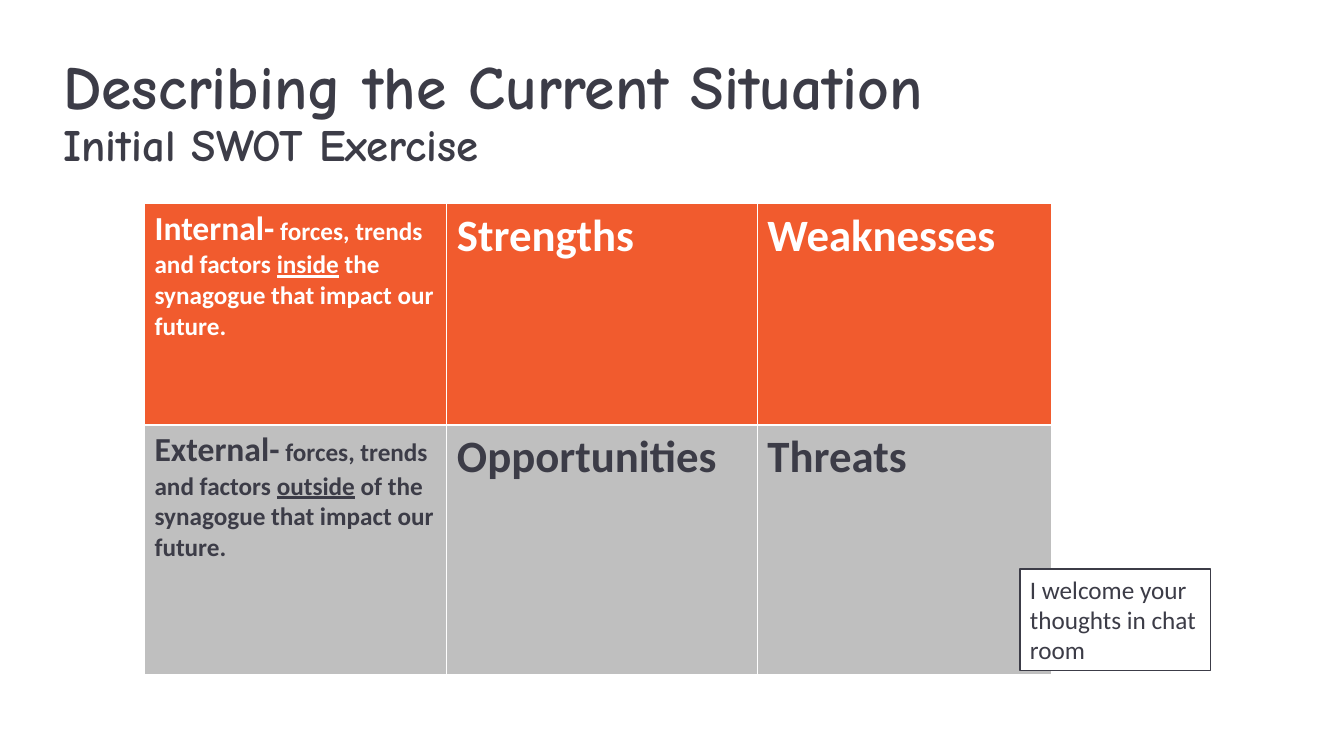
from dataclasses import dataclass

from lxml import etree
from pptx import Presentation
from pptx.dml.color import RGBColor
from pptx.enum.shapes import MSO_SHAPE
from pptx.enum.text import MSO_ANCHOR, MSO_AUTO_SIZE, PP_ALIGN
from pptx.oxml.ns import qn
from pptx.util import Pt

RECTANGLE = MSO_SHAPE.RECTANGLE
MIDDLE = MSO_ANCHOR.MIDDLE
TOP = MSO_ANCHOR.TOP
LEFT = PP_ALIGN.LEFT
FIT_SHAPE = MSO_AUTO_SIZE.SHAPE_TO_FIT_TEXT


@dataclass(frozen=True)
class Theme:
    ink: str = "3C3C47"
    white: str = "FFFFFF"
    orange: str = "F15B2E"
    grey: str = "BFBFBF"
    title_font: str = "Comic Neue"
    body_font: str = "Calibri"
    title_size: float = 44
    heading_size: float = 32
    scope_size: float = 24
    body_size: float = 18
    rule_width: float = 1


@dataclass(frozen=True)
class TextRun:
    text: str
    size: float
    underline: bool = False


@dataclass(frozen=True)
class SwotRow:
    scope: str
    place: str
    ending: str
    headings: tuple[str, str]
    fill: str
    ink: str
    height: float


THEME = Theme()
COLUMN_WIDTHS = (216, 221.8, 210.2)
SWOT_ROWS = (
    SwotRow("Internal-", "inside", " the synagogue that impact our future.",
            ("Strengths", "Weaknesses"), THEME.orange, THEME.white, 158),
    SwotRow("External-", "outside", " of the synagogue that impact our future.",
            ("Opportunities", "Threats"), THEME.grey, THEME.ink, 178.5),
)


def add_run(paragraph, content: TextRun, color: str, font: str, bold: bool) -> None:
    run = paragraph.add_run()
    run.text = content.text
    run.font.size = Pt(content.size)
    run.font.name = font
    run.font.bold = bold
    run.font.underline = content.underline
    run.font.color.rgb = RGBColor.from_string(color)


def add_title(slide) -> None:
    frame = slide.shapes.add_textbox(Pt(38.2), Pt(28.8), Pt(648), Pt(104.4)).text_frame
    frame.word_wrap = True
    frame.vertical_anchor = MIDDLE
    paragraph = frame.paragraphs[0]
    paragraph.line_spacing = 0.9
    add_run(paragraph, TextRun("Describing the Current Situation", THEME.title_size),
            THEME.ink, THEME.title_font, True)
    paragraph.add_line_break()
    add_run(paragraph, TextRun("Initial SWOT Exercise", THEME.heading_size),
            THEME.ink, THEME.title_font, True)


def add_borders(cell) -> None:
    properties = cell._tc.get_or_add_tcPr()
    for side in ("a:lnL", "a:lnR", "a:lnT", "a:lnB"):
        border = etree.SubElement(properties, qn(side), w=str(Pt(THEME.rule_width)))
        fill = etree.SubElement(border, qn("a:solidFill"))
        etree.SubElement(fill, qn("a:srgbClr"), val=THEME.white)


def fill_cell(cell, contents: list[TextRun], row: SwotRow) -> None:
    add_borders(cell)
    cell.fill.solid()
    cell.fill.fore_color.rgb = RGBColor.from_string(row.fill)
    for content in contents:
        add_run(cell.text_frame.paragraphs[0], content, row.ink, THEME.body_font, True)


def add_swot_table(slide) -> None:
    table = slide.shapes.add_table(
        len(SWOT_ROWS), len(COLUMN_WIDTHS), Pt(103.2), Pt(145.6),
        Pt(sum(COLUMN_WIDTHS)), Pt(sum(row.height for row in SWOT_ROWS))).table
    for column, width in zip(table.columns, COLUMN_WIDTHS):
        column.width = Pt(width)
    for index, row in enumerate(SWOT_ROWS):
        table.rows[index].height = Pt(row.height)
        description = [
            TextRun(row.scope, THEME.scope_size),
            TextRun(" forces, trends and factors ", THEME.body_size),
            TextRun(row.place, THEME.body_size, True),
            TextRun(row.ending, THEME.body_size),
        ]
        headings = [[TextRun(heading, THEME.heading_size)] for heading in row.headings]
        for cell, contents in zip(table.rows[index].cells, [description, *headings]):
            fill_cell(cell, contents, row)


def add_chat_note(slide) -> None:
    note = slide.shapes.add_shape(RECTANGLE, Pt(728.6), Pt(406.4), Pt(136.2), Pt(72.7))
    note.shadow.inherit = False
    note.fill.solid()
    note.fill.fore_color.rgb = RGBColor.from_string(THEME.white)
    note.line.color.rgb = RGBColor.from_string(THEME.ink)
    note.line.width = Pt(THEME.rule_width)
    frame = note.text_frame
    frame.word_wrap = True
    frame.auto_size = FIT_SHAPE
    frame.vertical_anchor = TOP
    frame.paragraphs[0].alignment = LEFT
    add_run(frame.paragraphs[0],
            TextRun("I welcome your thoughts in chat room", THEME.body_size),
            THEME.ink, THEME.body_font, False)


def main() -> None:
    presentation = Presentation()
    presentation.slide_width = Pt(960)
    presentation.slide_height = Pt(540)
    slide = presentation.slides.add_slide(presentation.slide_layouts[6])
    add_title(slide)
    add_swot_table(slide)
    add_chat_note(slide)
    presentation.save("out.pptx")


if __name__ == "__main__":
    main()
